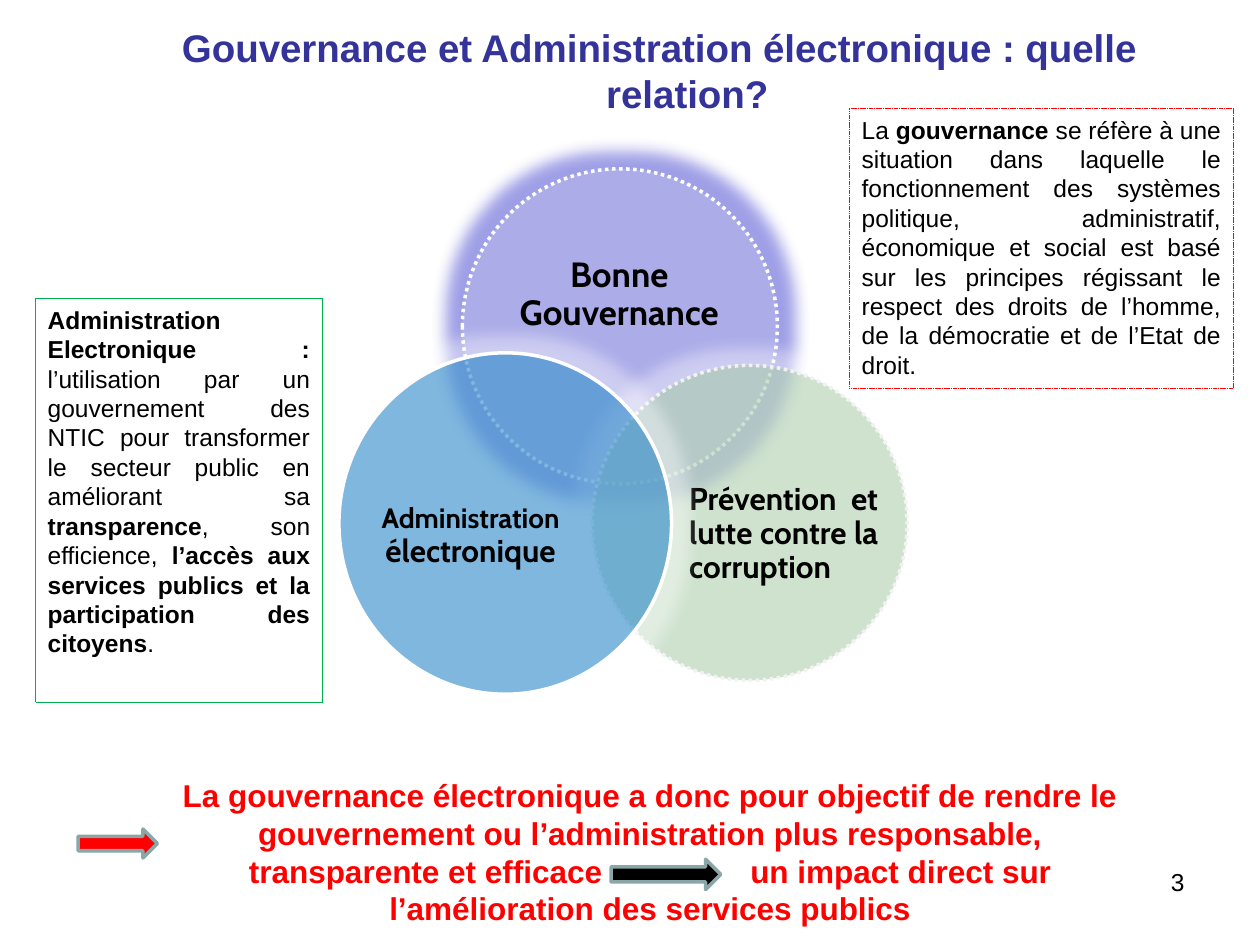
from lxml.etree import SubElement
from pptx import Presentation
from pptx.dml.color import RGBColor
from pptx.enum.dml import MSO_LINE_DASH_STYLE as DASH
from pptx.enum.shapes import MSO_SHAPE as SHAPE
from pptx.enum.text import MSO_ANCHOR as ANCHOR, PP_ALIGN as ALIGN
from pptx.oxml.ns import qn
from pptx.util import Inches, Pt


def color(value):
    return RGBColor.from_string(value)


def add_text(box, runs, size, align, ink="000000", font="Arial"):
    frame = box.text_frame
    frame.word_wrap = True
    frame.vertical_anchor = ANCHOR.TOP
    paragraph = frame.paragraphs[0]
    paragraph.alignment = align
    paragraph.font.size = Pt(size)
    paragraph.font.name = font
    paragraph.font.color.rgb = color(ink)
    for text, bold in runs:
        run = paragraph.add_run()
        run.text = text
        run.font.bold = bold
    return paragraph


prs = Presentation()
prs.slide_width = Inches(10)
prs.slide_height = Inches(7.5)
slide = prs.slides.add_slide(prs.slide_layouts[6])
shapes = slide.shapes

page_number = shapes.add_textbox(Inches(7.17), Inches(6.83), Inches(2.33), Inches(0.52))
add_text(page_number, [("3", False)], 14, ALIGN.RIGHT)

circles = [
    ((3.67, 1.34, 2.5, 2.5), "D1D1F0", 27, "FFFFFF", DASH.ROUND_DOT, "3333CC", 47,
     (4, 1.78, 1.83, 1.13), ["Bonne Gouvernance"], 20, ALIGN.CENTER),
    ((4.7, 2.9, 2.5, 2.5), "9FC69F", 50, "F2F2F2", DASH.ROUND_DOT, "FFFFFF", 40,
     (5.47, 3.55, 1.5, 1.38), ["Prévention et lutte contre la corruption"], 18, ALIGN.JUSTIFY),
    ((2.69, 2.8, 2.64, 2.71), "0070C0", 50, "FFFFFF", DASH.SOLID, "FFFFFF", 40,
     (2.94, 3.5, 1.59, 1.49), ["Administration", " électronique"], 18, ALIGN.CENTER),
]
for place, fill, opacity, edge, dash, glow, glow_opacity, label_place, words, size, align in circles:
    circle = shapes.add_shape(SHAPE.OVAL, *map(Inches, place))
    circle.shadow.inherit = False
    circle.fill.solid()
    circle.fill.fore_color.rgb = color(fill)
    fill_color = circle.fill._xPr.find(qn("a:solidFill"))[0]
    SubElement(fill_color, qn("a:alpha"), val=str(opacity * 1000))
    circle.line.color.rgb = color(edge)
    circle.line.width = Pt(2)
    circle.line.dash_style = dash
    effects = circle._element.spPr.find(qn("a:effectLst"))
    halo = SubElement(effects, qn("a:glow"), rad=str(Inches(0.25)))
    halo_color = SubElement(halo, qn("a:srgbClr"), val=glow)
    SubElement(halo_color, qn("a:alpha"), val=str(glow_opacity * 1000))

    label = shapes.add_textbox(*map(Inches, label_place))
    paragraph = add_text(label, [(word, True) for word in words], size, align, font="Cabin")
    paragraph.line_spacing = 0.9
    if len(words) > 1:
        paragraph.runs[0].font.size = Pt(16)
    frame = label.text_frame
    frame.vertical_anchor = ANCHOR.MIDDLE
    frame.margin_left = frame.margin_right = frame.margin_top = frame.margin_bottom = 0

definitions = [
    ((0.28, 2.37, 2.28, 3.2), "00B050", DASH.ROUND_DOT, [
        ("Administration Electronique : ", True),
        ("l’utilisation par un gouvernement des NTIC pour transformer "
         "le secteur public en améliorant sa ", False),
        ("transparence", True),
        (", son efficience, ", False),
        ("l’accès aux services publics et la participation des citoyens", True),
        (".", False),
    ]),
    ((6.74, 0.86, 3.05, 2.22), "FF0000", DASH.DASH, [
        ("La ", False),
        ("gouvernance", True),
        (" se réfère à une situation dans laquelle le fonctionnement des systèmes "
         "politique, administratif, économique et social est basé sur les principes "
         "régissant le respect des droits de l’homme, de la démocratie et de l’Etat "
         "de droit.", False),
    ]),
]
for place, edge, dash, runs in definitions:
    definition = shapes.add_shape(SHAPE.RECTANGLE, *map(Inches, place))
    definition.shadow.inherit = False
    definition.fill.solid()
    definition.fill.fore_color.rgb = color("FFFFFF")
    definition.line.color.rgb = color(edge)
    definition.line.width = Pt(0.25)
    definition.line.dash_style = dash
    add_text(definition, runs, 14, ALIGN.JUSTIFY)
    if dash == DASH.DASH:
        definition.line._ln.find(qn("a:prstDash")).set("val", "sysDash")

title = shapes.add_textbox(Inches(1.25), Inches(0.14), Inches(7.97), Inches(0.84))
heading = add_text(title, [("Gouvernance et Administration électronique : quelle relation?", True)],
                   22, ALIGN.CENTER, "333399")
heading_format = heading._p.get_or_add_pPr()
heading_format.set("marL", str(Inches(0.44)))
heading_format.set("indent", str(-Inches(0.44)))

conclusion = shapes.add_textbox(Inches(1.33), Inches(6.11), Inches(7.66), Inches(1.31))
conclusion.line.color.rgb = color("FFFFFF")
conclusion.line.width = Pt(0.75)
message = add_text(conclusion, [(
    "La gouvernance électronique a donc pour objectif de rendre le gouvernement ou "
    "l’administration plus responsable, transparente et efficace\tun impact direct sur "
    "l’amélioration des services publics", True)], 18, ALIGN.CENTER, "FF0000")
tabs = message._p.get_or_add_pPr().makeelement(qn("a:tabLst"))
SubElement(tabs, qn("a:tab"), pos=str(Inches(3.98)), algn="l")
message._p.pPr.find(qn("a:defRPr")).addprevious(tabs)

for place, fill in [((0.62, 6.58, 0.63, 0.23), "FF0000"), ((4.85, 6.82, 0.87, 0.24), "000000")]:
    arrow = shapes.add_shape(SHAPE.RIGHT_ARROW, *map(Inches, place))
    arrow.shadow.inherit = False
    arrow.fill.solid()
    arrow.fill.fore_color.rgb = color(fill)
    arrow.line.color.rgb = color("8AA6A8")
    arrow.line.width = Pt(2)

prs.save("out.pptx")
